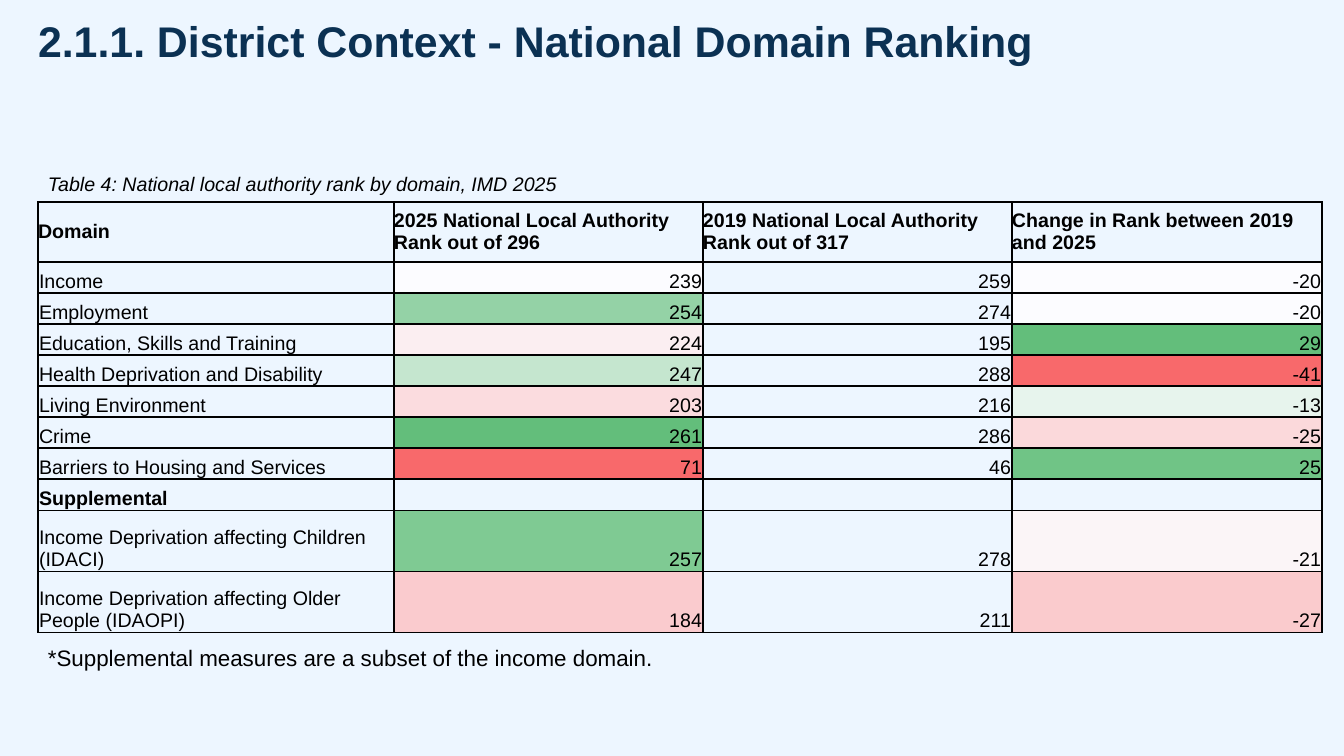
from dataclasses import dataclass

from lxml import etree
from pptx import Presentation
from pptx import util as u
from pptx.dml import color
from pptx.enum import text
from pptx.oxml import ns

SCALE = 914400 / 100.8


@dataclass(frozen=True)
class Theme:
    font: str = "Arial"
    background: str = "EDF6FF"
    navy: str = "0B3153"
    black: str = "000000"
    title: float = 30.6
    table: float = 14
    note: float = 16
    border: float = 1


THEME = Theme()

COLUMNS = [356, 309, 309, 310]
HEADER_HEIGHT, ROW_HEIGHT, TALL_HEIGHT = 60, 31, 61
HEADINGS = [
    "Domain",
    "2025 National Local Authority Rank out of 296",
    "2019 National Local Authority Rank out of 317",
    "Change in Rank between 2019 and 2025",
]
RANKS = [
    ("Income", 239, 259, -20, "FCFCFF", "FCFCFF"),
    ("Employment", 254, 274, -20, "94D2A6", "FCFCFF"),
    ("Education, Skills and Training", 224, 195, 29, "FBEEF1", "63BE7B"),
    ("Health Deprivation and Disability", 247, 288, -41, "C5E6CF", "F8696B"),
    ("Living Environment", 203, 216, -13, "FBDCDF", "E7F4ED"),
    ("Crime", 261, 286, -25, "63BE7B", "FBD9DB"),
    ("Barriers to Housing and Services", 71, 46, 25, "F8696B", "70C486"),
    ("Supplemental", "", "", "", None, None),
    ("Income Deprivation affecting Children (IDACI)", 257, 278, -21, "7FCA93", "FBF5F7"),
    ("Income Deprivation affecting Older People (IDAOPI)", 184, 211, -27, "FACBCE", "FACBCD"),
]


def px(n):
    return u.Emu(round(n * SCALE))


def rgb(value):
    return color.RGBColor.from_string(value)


def apply(target, values):
    for name, value in values.items():
        setattr(target, name, value)


def place(sp, left, top, width, height):
    apply(sp, {"left": px(left), "top": px(top), "width": px(width), "height": px(height)})


def write(tf, words, size, ink=THEME.black, bold=False, italic=False, **paragraph):
    p = tf.paragraphs[0]
    apply(p, paragraph)
    r = p.add_run()
    r.text = words
    apply(r.font, {"name": THEME.font, "size": u.Pt(size), "bold": bold, "italic": italic})
    r.font.color.rgb = rgb(ink)


def add_title(s, words):
    sp = s.shapes.title
    place(sp, 38, 25, 1072, 58)
    tf = sp.text_frame
    apply(tf, {
        "margin_left": 0, "margin_top": 0, "margin_right": 0, "margin_bottom": 0,
        "vertical_anchor": text.MSO_ANCHOR.TOP, "auto_size": text.MSO_AUTO_SIZE.NONE,
        "word_wrap": True,
    })
    write(tf, words, THEME.title, THEME.navy, bold=True, line_spacing=0.8,
          space_after=u.Pt(6), alignment=text.PP_ALIGN.LEFT)


def add_caption(s, words, box, size, italic=False):
    tf = s.shapes.add_textbox(*map(px, box)).text_frame
    apply(tf, {"word_wrap": True, "auto_size": text.MSO_AUTO_SIZE.SHAPE_TO_FIT_TEXT})
    write(tf, words, size, italic=italic)


def set_borders(cell):
    props = cell._tc.get_or_add_tcPr()
    for position, side in enumerate(("lnL", "lnR", "lnT", "lnB")):
        line = etree.Element(ns.qn(f"a:{side}"), w=str(u.Pt(THEME.border)))
        fill = etree.SubElement(line, ns.qn("a:solidFill"))
        etree.SubElement(fill, ns.qn("a:srgbClr"), val=THEME.black)
        props.insert(position, line)


def format_cell(cell, words, fill=None, header=False, bold=False, right=False):
    margin = 0 if header else px(1)
    apply(cell, {
        "margin_left": margin, "margin_top": margin, "margin_right": margin, "margin_bottom": 0,
        "vertical_anchor": text.MSO_ANCHOR.MIDDLE if header else text.MSO_ANCHOR.BOTTOM,
    })
    if fill:
        cell.fill.solid()
        cell.fill.fore_color.rgb = rgb(fill)
    else:
        cell.fill.background()
    set_borders(cell)
    if words:
        align = text.PP_ALIGN.RIGHT if right else text.PP_ALIGN.LEFT
        write(cell.text_frame, words, THEME.table, bold=bold, alignment=align)


def add_rank_table(s, left, top):
    heights = [HEADER_HEIGHT] + [
        TALL_HEIGHT if "(" in row[0] else ROW_HEIGHT for row in RANKS
    ]
    frame = s.shapes.add_table(len(heights), len(COLUMNS), px(left), px(top),
                               px(sum(COLUMNS)), px(sum(heights)))
    table = frame.table
    apply(table, {"first_row": False, "horz_banding": False})
    for column, width in zip(table.columns, COLUMNS):
        column.width = px(width)
    for row, height in zip(table.rows, heights):
        row.height = px(height)
    for c, heading in enumerate(HEADINGS):
        format_cell(table.cell(0, c), heading, header=True, bold=True)
    for i, (domain, now, before, change, now_fill, change_fill) in enumerate(RANKS, 1):
        format_cell(table.cell(i, 0), domain, bold=domain == "Supplemental")
        values = ((now, now_fill), (before, None), (change, change_fill))
        for c, (value, fill) in enumerate(values, 1):
            format_cell(table.cell(i, c), str(value), fill, right=True)


def main():
    prs = Presentation()
    apply(prs, {"slide_width": px(1344), "slide_height": px(756)})
    s = prs.slides.add_slide(prs.slide_layouts[5])
    s.background.fill.solid()
    s.background.fill.fore_color.rgb = rgb(THEME.background)
    add_title(s, "2.1.1. District Context - National Domain Ranking")
    add_caption(s, "Table 4: National local authority rank by domain, IMD 2025",
                (38, 167, 945, 34), THEME.table, italic=True)
    add_rank_table(s, 38, 202)
    add_caption(s, "*Supplemental measures are a subset of the income domain.",
                (38, 639, 1212, 37), THEME.note)
    prs.save("out.pptx")


if __name__ == "__main__":
    main()
